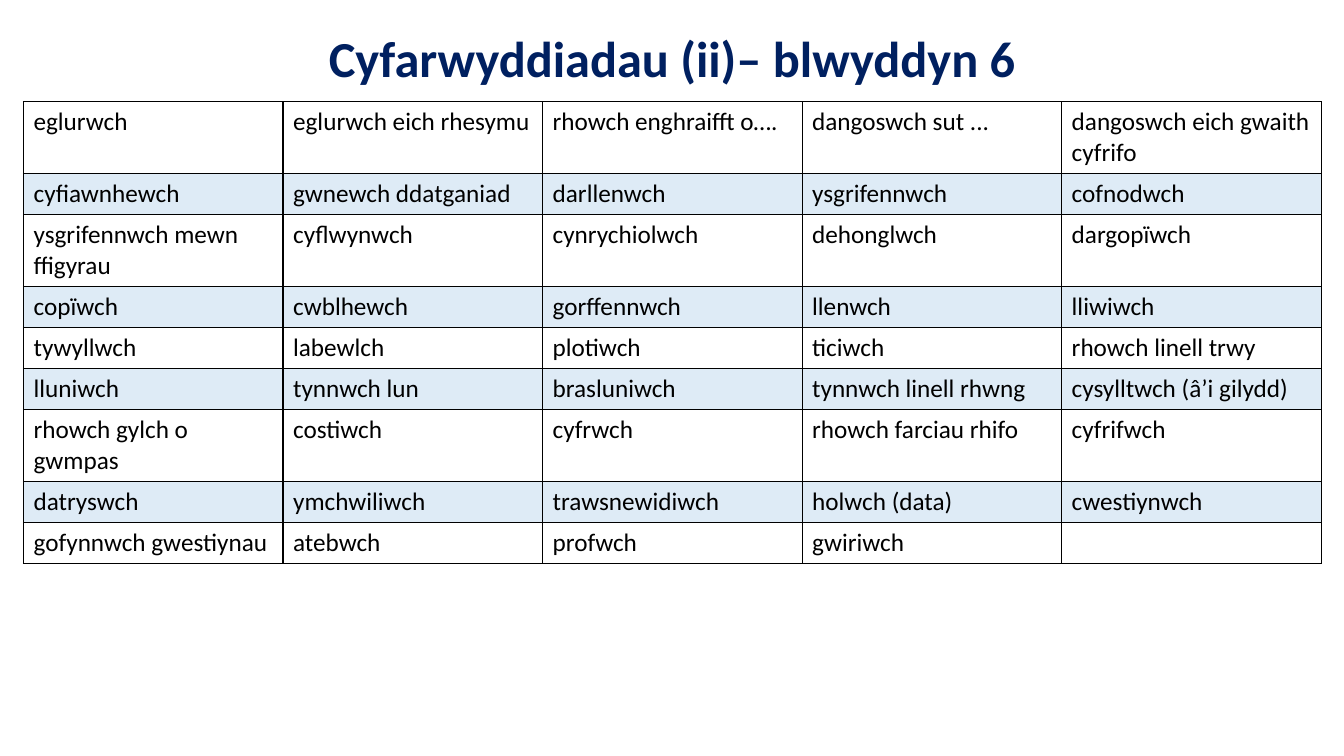
"""Builds a slide with a table of Welsh instruction verbs for year 6."""
import dataclasses

import lxml.etree
import pptx
import pptx.dml.color
import pptx.enum.text
import pptx.oxml.ns
import pptx.util

NAVY = pptx.dml.color.RGBColor(0x00, 0x20, 0x60)
BLACK = pptx.dml.color.RGBColor(0x00, 0x00, 0x00)
BLUE = pptx.dml.color.RGBColor(0x5B, 0x9B, 0xD5)
FACE = "Calibri"
WIDE = pptx.util.Inches(13.33)
HIGH = pptx.util.Inches(7.5)
LOW_ROW = 5.43
TALL_ROW = 9.5
TALL = {0, 2, 6}
TITLE = "Cyfarwyddiadau (ii)– blwyddyn 6"
WORDS = [
    ["eglurwch", "eglurwch eich rhesymu", "rhowch enghraifft o….", "dangoswch sut ...", "dangoswch eich gwaith cyfrifo"],
    ["cyfiawnhewch", "gwnewch ddatganiad", "darllenwch", "ysgrifennwch", "cofnodwch"],
    ["ysgrifennwch mewn ffigyrau", "cyflwynwch", "cynrychiolwch", "dehonglwch", "dargopïwch"],
    ["copïwch", "cwblhewch", "gorffennwch", "llenwch", "lliwiwch"],
    ["tywyllwch", "labewlch", "plotiwch", "ticiwch", "rhowch linell trwy"],
    ["lluniwch", "tynnwch lun", "brasluniwch", "tynnwch linell rhwng", "cysylltwch (â’i gilydd)"],
    ["rhowch gylch o gwmpas", "costiwch", "cyfrwch", "rhowch farciau rhifo", "cyfrifwch"],
    ["datryswch", "ymchwiliwch", "trawsnewidiwch", "holwch (data)", "cwestiynwch"],
    ["gofynnwch gwestiynau", "atebwch", "profwch", "gwiriwch", ""],
]


def across(share: float) -> int:
    """Turn a percentage of the slide's width into a length."""
    return round(WIDE * share / 100)


def down(share: float) -> int:
    """Turn a percentage of the slide's height into a length."""
    return round(HIGH * share / 100)


@dataclasses.dataclass(frozen=True)
class Box:
    """A place on the slide in percentages of its size."""
    left: float
    top: float
    width: float
    height: float

    def place(self) -> tuple[int, int, int, int]:
        """Give left, top, width and height as lengths."""
        return across(self.left), down(self.top), across(self.width), down(self.height)


@dataclasses.dataclass(frozen=True)
class Style:
    """The look of a run of text."""
    size: float
    color: pptx.dml.color.RGBColor
    bold: bool = False


HEAD = Box(6.9, 2.67, 86.27, 10.8)
GRID = Box(1.75, 13.47, 96.55, 61.08)
HEAD_STYLE = Style(36, NAVY, True)
WORD_STYLE = Style(18, BLACK)


def add_text(para, text: str, style: Style) -> None:
    """Add one styled run to a paragraph."""
    run = para.add_run()
    run.text = text
    run.font.name = FACE
    run.font.size = pptx.util.Pt(style.size)
    run.font.bold = style.bold
    run.font.color.rgb = style.color


def add_edges(cell) -> None:
    """Draw a thin black line on each side of a cell."""
    props = cell._tc.get_or_add_tcPr()
    name = pptx.oxml.ns.qn
    for side in "LRTB":
        edge = lxml.etree.SubElement(props, name(f"a:ln{side}"), w=str(pptx.util.Pt(1)))
        fill = lxml.etree.SubElement(edge, name("a:solidFill"))
        lxml.etree.SubElement(fill, name("a:srgbClr"), val=str(BLACK))


def add_tint(cell) -> None:
    """Fill a cell with blue at a fifth of full strength."""
    cell.fill.solid()
    cell.fill.fore_color.rgb = BLUE
    name = pptx.oxml.ns.qn
    color = cell._tc.tcPr.find(f"{name('a:solidFill')}/{name('a:srgbClr')}")
    lxml.etree.SubElement(color, name("a:alpha"), val="20000")


def add_title(slide) -> None:
    """Place and fill the title."""
    title = slide.shapes.title
    title.left, title.top, title.width, title.height = HEAD.place()
    frame = title.text_frame
    frame.word_wrap = True
    frame.auto_size = pptx.enum.text.MSO_AUTO_SIZE.NONE
    frame.vertical_anchor = pptx.enum.text.MSO_ANCHOR.MIDDLE
    para = frame.paragraphs[0]
    para.alignment = pptx.enum.text.PP_ALIGN.CENTER
    para.line_spacing = 0.9
    add_text(para, TITLE, HEAD_STYLE)


def add_words(slide) -> None:
    """Draw the table of verbs with every second row tinted."""
    count = len(WORDS[0])
    table = slide.shapes.add_table(len(WORDS), count, *GRID.place()).table
    table.first_row = False
    table.horz_banding = False
    for col in table.columns:
        col.width = across(GRID.width / count)
    for row, words in enumerate(WORDS):
        table.rows[row].height = down(TALL_ROW if row in TALL else LOW_ROW)
        for col, word in enumerate(words):
            cell = table.cell(row, col)
            add_edges(cell)
            if row % 2:
                add_tint(cell)
            else:
                cell.fill.background()
            if word:
                add_text(cell.text_frame.paragraphs[0], word, WORD_STYLE)


def main() -> None:
    """Build the slide and save it."""
    deck = pptx.Presentation()
    deck.slide_width, deck.slide_height = WIDE, HIGH
    slide = deck.slides.add_slide(deck.slide_layouts.get_by_name("Title Only"))
    add_title(slide)
    add_words(slide)
    deck.save("out.pptx")


if __name__ == "__main__":
    main()
